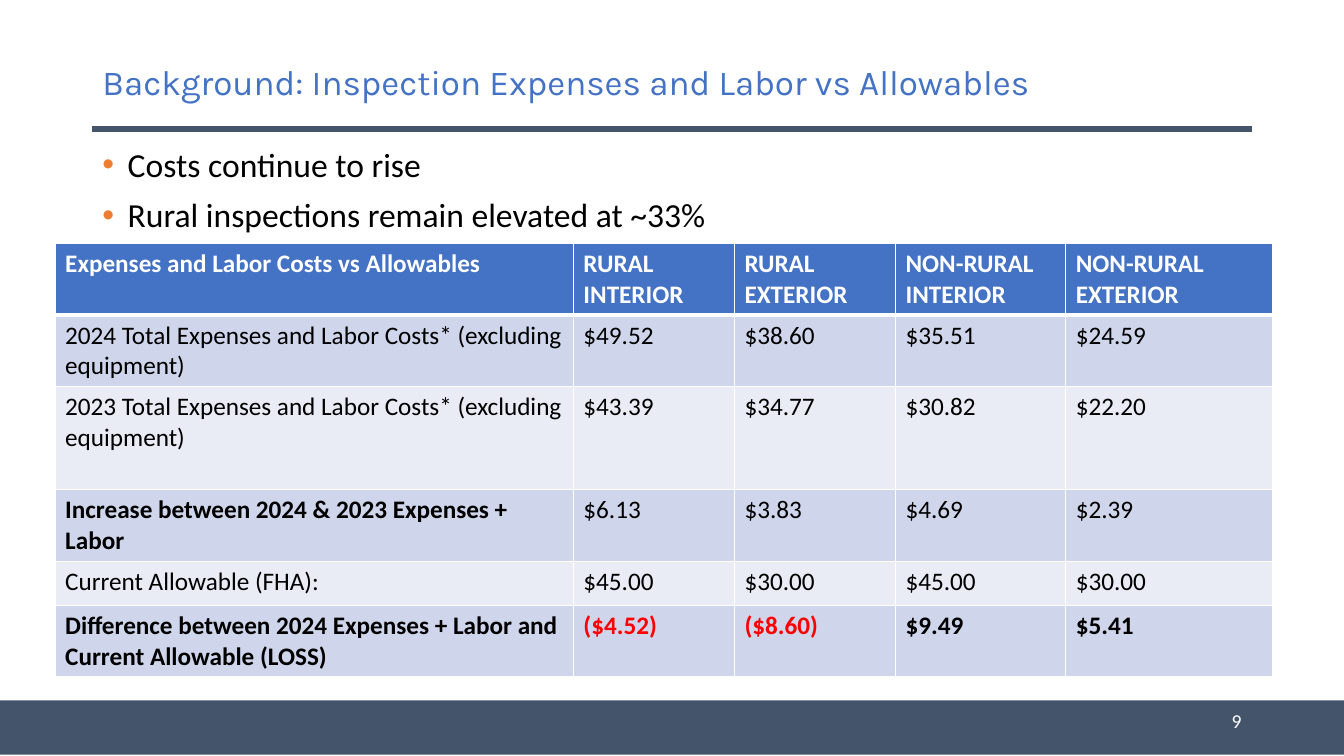
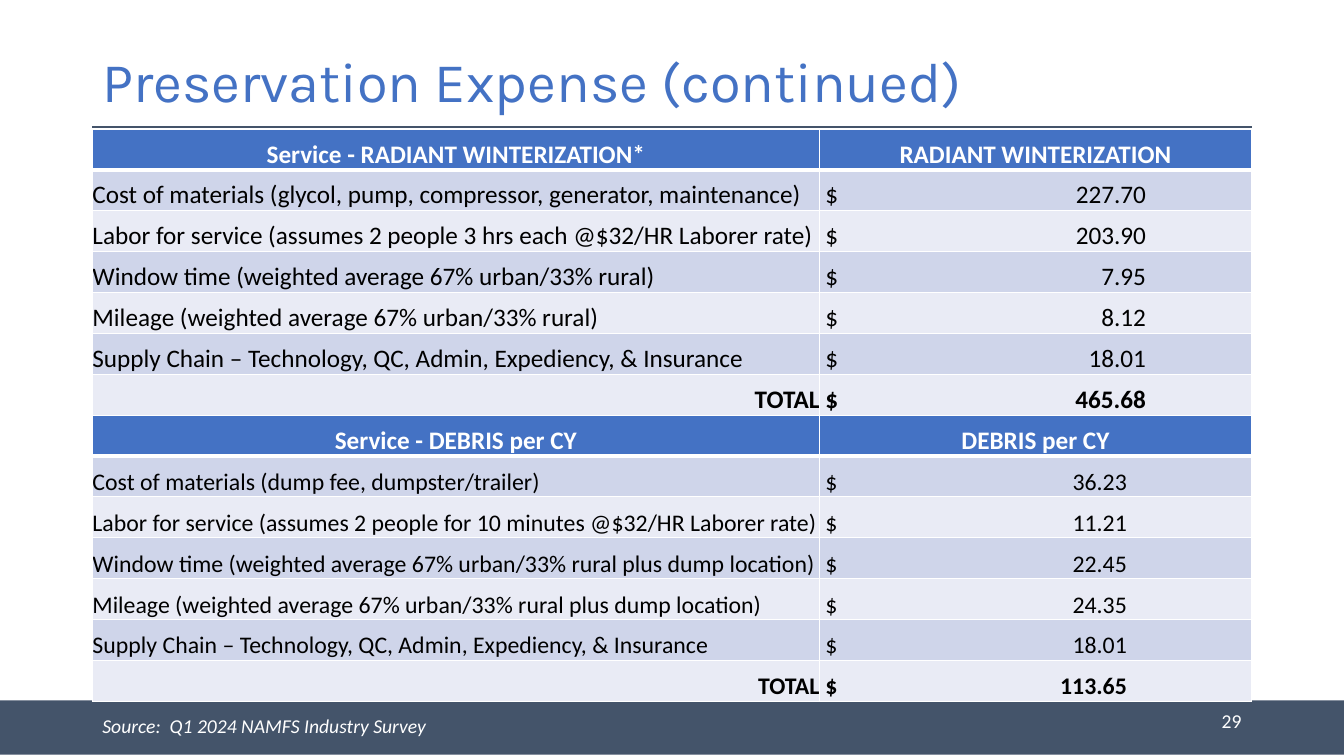
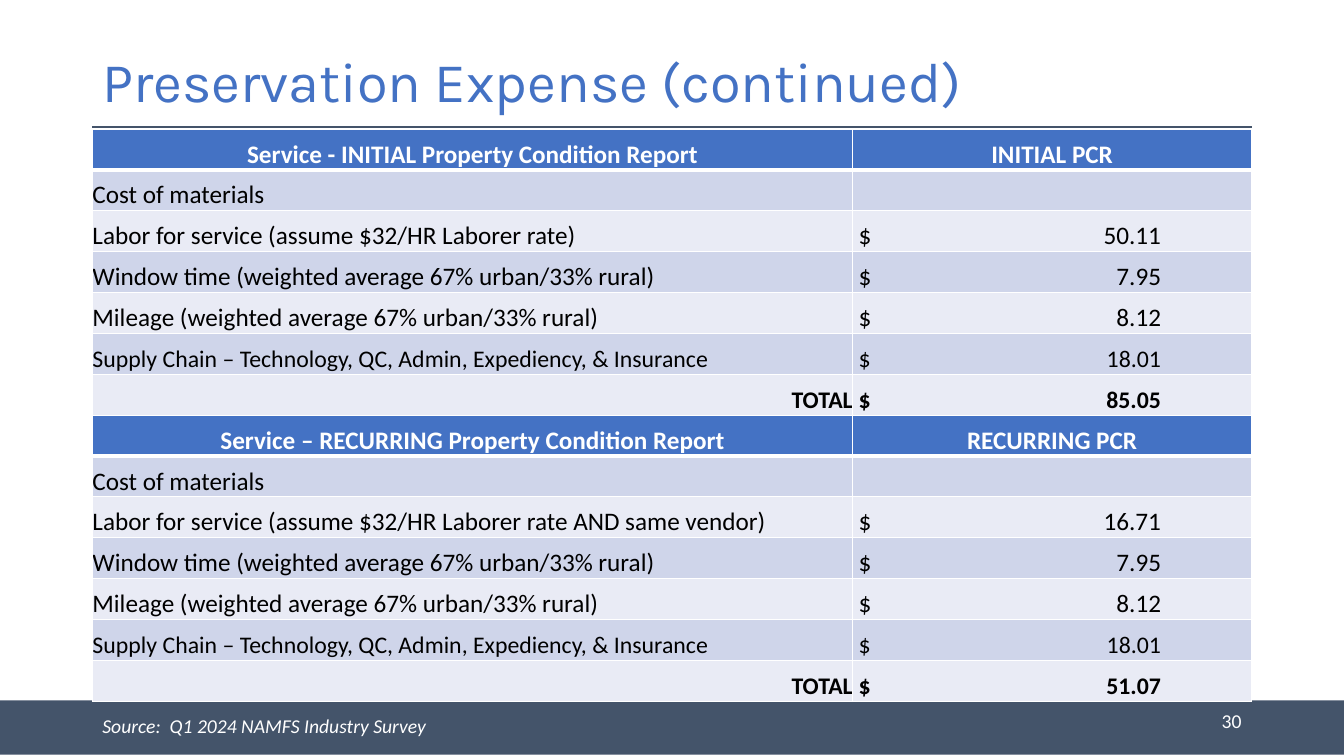
from lxml import etree
from pptx import Presentation
from pptx.dml.color import RGBColor
from pptx.enum.shapes import MSO_CONNECTOR, MSO_SHAPE
from pptx.enum.text import MSO_ANCHOR, PP_ALIGN
from pptx.oxml.ns import qn
from pptx.util import Cm, Pt

RECTANGLE = MSO_SHAPE.RECTANGLE
STRAIGHT = MSO_CONNECTOR.STRAIGHT
TOP, MIDDLE, BOTTOM = MSO_ANCHOR.TOP, MSO_ANCHOR.MIDDLE, MSO_ANCHOR.BOTTOM
LEFT, CENTER, RIGHT = PP_ALIGN.LEFT, PP_ALIGN.CENTER, PP_ALIGN.RIGHT

COLORS = {
    "slate": "44546A",
    "blue": "4472C4",
    "orange": "ED7D31",
    "band_dark": "CFD5EA",
    "band_light": "E9EBF5",
    "white": "FFFFFF",
    "black": "000000",
    "red": "FF0000",
}
TITLE_FONT, BODY_FONT = "Karla", "Calibri"
SLIDE_WIDTH, SLIDE_HEIGHT = 33.87, 19.05
MARGIN, CONTENT_WIDTH = 2.33, 29.21
RULE_TOP, FOOTER_TOP = 3.25, 17.65
EXPENSE_ROW_HEIGHT = 1.03
SUPPLY_CHAIN = "Supply Chain – Technology, QC, Admin, Expediency, & Insurance"
WINDOW_TIME = "Window time (weighted average 67% urban/33% rural)"
MILEAGE = "Mileage (weighted average 67% urban/33% rural)"

COST_WIDTHS = [13.06, 4.06, 4.06, 4.29, 5.21]
COST_HEIGHTS = [1.8, 1.8, 2.6, 1.8, 1.11, 1.8]
COST_ROWS = [
    ["Expenses and Labor Costs vs Allowables", "RURAL\nINTERIOR", "RURAL\nEXTERIOR",
     "NON-RURAL\nINTERIOR", "NON-RURAL\nEXTERIOR"],
    ["2024 Total Expenses and Labor Costs* (excluding equipment)",
     "$49.52", "$38.60", "$35.51", "$24.59"],
    ["2023 Total Expenses and Labor Costs* (excluding equipment)",
     "$43.39", "$34.77", "$30.82", "$22.20"],
    ["Increase between 2024 & 2023 Expenses + Labor",
     "$6.13", "$3.83", "$4.69", "$2.39"],
    ["Current Allowable (FHA):", "$45.00", "$30.00", "$45.00", "$30.00"],
    ["Difference between 2024 Expenses + Labor and Current Allowable (LOSS)",
     "($4.52)", "($8.60)", "$9.49", "$5.41"],
]
RADIANT_ROWS = [
    ("Service - RADIANT WINTERIZATION*", "RADIANT WINTERIZATION"),
    ("Cost of materials (glycol, pump, compressor, generator, maintenance)", "227.70"),
    ("Labor for service (assumes 2 people 3 hrs each @$32/HR Laborer rate)", "203.90"),
    (WINDOW_TIME, "7.95"),
    (MILEAGE, "8.12"),
    (SUPPLY_CHAIN, "18.01"),
    ("TOTAL", "465.68"),
]
DEBRIS_ROWS = [
    ("Service - DEBRIS per CY", "DEBRIS per CY"),
    ("Cost of materials (dump fee, dumpster/trailer)", "36.23"),
    ("Labor for service (assumes 2 people for 10 minutes @$32/HR Laborer rate)", "11.21"),
    ("Window time (weighted average 67% urban/33% rural plus dump location)", "22.45"),
    ("Mileage (weighted average 67% urban/33% rural plus dump location)", "24.35"),
    (SUPPLY_CHAIN, "18.01"),
    ("TOTAL", "113.65"),
]
INITIAL_ROWS = [
    ("Service - INITIAL Property Condition Report", "INITIAL PCR"),
    ("Cost of materials", ""),
    ("Labor for service (assume $32/HR Laborer rate)", "50.11"),
    (WINDOW_TIME, "7.95"),
    (MILEAGE, "8.12"),
    (SUPPLY_CHAIN, "18.01"),
    ("TOTAL", "85.05"),
]
RECURRING_ROWS = [
    ("Service – RECURRING Property Condition Report", "RECURRING PCR"),
    ("Cost of materials", ""),
    ("Labor for service (assume $32/HR Laborer rate AND same vendor)", "16.71"),
    (WINDOW_TIME, "7.95"),
    (MILEAGE, "8.12"),
    (SUPPLY_CHAIN, "18.01"),
    ("TOTAL", "51.07"),
]


def rgb(name):
    """Return the named colour."""
    return RGBColor.from_string(COLORS[name])


def write_text(text_frame, text, size, color, font=BODY_FONT, align=LEFT, bold=False, italic=False):
    """Fill a text frame and format all its runs."""
    text_frame.text = text
    for paragraph in text_frame.paragraphs:
        paragraph.alignment = align
        for run in paragraph.runs:
            run.font.name = font
            run.font.size = Pt(size)
            run.font.bold = bold
            run.font.italic = italic
            run.font.color.rgb = rgb(color)


def add_text(slide, box, text, size, color, anchor=TOP, **style):
    """Add a wrapping text box and return its text frame."""
    text_frame = slide.shapes.add_textbox(*map(Cm, box)).text_frame
    text_frame.word_wrap = True
    text_frame.vertical_anchor = anchor
    write_text(text_frame, text, size, color, **style)
    return text_frame


def add_frame(presentation, title, title_size, number):
    """Add a slide with its footer band, title rule, title and number."""
    slide = presentation.slides.add_slide(presentation.slide_layouts[6])
    band = slide.shapes.add_shape(RECTANGLE, 0, Cm(FOOTER_TOP), Cm(SLIDE_WIDTH), Cm(1.37))
    band.shadow.inherit = False
    band.fill.solid()
    band.fill.fore_color.rgb = rgb("slate")
    band.line.fill.background()
    rule = slide.shapes.add_connector(
        STRAIGHT, Cm(MARGIN), Cm(RULE_TOP), Cm(MARGIN + CONTENT_WIDTH), Cm(RULE_TOP))
    rule.line.color.rgb = rgb("slate")
    rule.line.width = Pt(4)
    etree.SubElement(rule._element.spPr, qn("a:effectLst"))
    heading = add_text(slide, (MARGIN, 1.01, CONTENT_WIDTH, 2.24), title, title_size, "blue",
                       MIDDLE, font=TITLE_FONT)
    heading.paragraphs[0].line_spacing = 0.9
    add_text(slide, (23.92, FOOTER_TOP, 7.62, 1.02), str(number), 14, "white", MIDDLE, align=RIGHT)
    return slide


def add_bullets(slide, box, items):
    """Add a bulleted list."""
    text_frame = add_text(slide, box, "\n".join(items), 24, "black")
    for index, paragraph in enumerate(text_frame.paragraphs):
        paragraph.line_spacing = 0.9
        paragraph.space_before = Pt(10 if index else 0)
        properties = paragraph._p.get_or_add_pPr()
        properties.set("marL", str(Cm(0.64)))
        properties.set("indent", str(Cm(-0.64)))
        bullet_color = etree.SubElement(properties, qn("a:buClr"))
        etree.SubElement(bullet_color, qn("a:srgbClr"), val=COLORS["orange"])
        etree.SubElement(properties, qn("a:buFont"), typeface="Arial")
        etree.SubElement(properties, qn("a:buChar"), char="•")


def set_borders(cell, row):
    """Draw white cell borders, thicker under the header row."""
    widths = {"lnL": 1, "lnR": 1, "lnT": 3 if row == 1 else 1, "lnB": 1 if row else 3}
    properties = cell._tc.get_or_add_tcPr()
    for side, width in widths.items():
        line = etree.SubElement(properties, qn("a:" + side), w=str(Pt(width)))
        fill = etree.SubElement(line, qn("a:solidFill"))
        etree.SubElement(fill, qn("a:srgbClr"), val=COLORS["white"])


def add_grid(slide, left, top, widths, heights):
    """Add an empty banded table with a blue header row."""
    box = map(Cm, (left, top, sum(widths), sum(heights)))
    table = slide.shapes.add_table(len(heights), len(widths), *box).table
    table.horz_banding = False
    table.first_row = False
    for column, width in zip(table.columns, widths):
        column.width = Cm(width)
    for index, (row, height) in enumerate(zip(table.rows, heights)):
        row.height = Cm(height)
        band = "band_dark" if index % 2 else "band_light"
        for cell in row.cells:
            set_borders(cell, index)
            cell.fill.solid()
            cell.fill.fore_color.rgb = rgb(band if index else "blue")
    return table


def add_cost_table(slide):
    """Add the comparison of costs with allowables."""
    table = add_grid(slide, 1.39, 6.14, COST_WIDTHS, COST_HEIGHTS)
    last = len(COST_ROWS) - 1
    for row, values in enumerate(COST_ROWS):
        for column, text in enumerate(values):
            color = "red" if text.startswith("(") else "black" if row else "white"
            bold = row in (0, last) or text.startswith("Increase")
            write_text(table.cell(row, column).text_frame, text, 18, color, bold=bold)


def add_right_tab(paragraph, position):
    """Give a paragraph a right-aligned tab stop."""
    tabs = etree.SubElement(paragraph._p.get_or_add_pPr(), qn("a:tabLst"))
    etree.SubElement(tabs, qn("a:tab"), pos=str(Cm(position)), algn="r")


def add_expense_table(slide, top, rows, label_width, tab, small_from):
    """Add a service table; rows from small_from on have smaller text."""
    widths = [label_width, CONTENT_WIDTH - label_width]
    table = add_grid(slide, MARGIN, top, widths, [EXPENSE_ROW_HEIGHT] * len(rows))
    for row, values in enumerate(rows):
        is_total = values[0] == "TOTAL"
        for column, text in enumerate(values):
            is_amount = row > 0 and column == 1 and text != ""
            cell = table.cell(row, column)
            cell.vertical_anchor = BOTTOM
            cell.margin_left = Cm(0.15 if is_amount else 0)
            cell.margin_right = cell.margin_bottom = 0
            cell.margin_top = Cm(0.02)
            align = CENTER if row == 0 else RIGHT if is_total and column == 0 else LEFT
            write_text(cell.text_frame, "$\t" + text if is_amount else text,
                       17 if row >= small_from else 18, "black" if row else "white",
                       align=align, bold=row == 0 or is_total)
            if is_amount:
                add_right_tab(cell.text_frame.paragraphs[0], tab)


def add_expense_slide(presentation, number, label_width, upper, lower):
    """Add a slide with two stacked service tables and a source line."""
    slide = add_frame(presentation, "Preservation Expense (continued)", 40, number)
    top = RULE_TOP
    for rows, tab, small_from in (upper, lower):
        add_expense_table(slide, top, rows, label_width, tab, small_from)
        top += EXPENSE_ROW_HEIGHT * len(rows)
    add_text(slide, (MARGIN, 17.86, 16.94, 0.86), "Source:  Q1 2024 NAMFS Industry Survey",
             14, "white", italic=True)


def main():
    """Build and save the presentation."""
    presentation = Presentation()
    presentation.slide_width = Cm(SLIDE_WIDTH)
    presentation.slide_height = Cm(SLIDE_HEIGHT)
    slide = add_frame(
        presentation, "Background: Inspection Expenses and Labor vs Allowables", 25, 9)
    add_bullets(slide, (MARGIN, 3.61, CONTENT_WIDTH, 2.5),
                ["Costs continue to rise", "Rural inspections remain elevated at ~33%"])
    add_cost_table(slide)
    add_expense_slide(presentation, 29, 18.32, (RADIANT_ROWS, 8.08, 7), (DEBRIS_ROWS, 7.6, 1))
    add_expense_slide(presentation, 30, 19.16, (INITIAL_ROWS, 7.62, 5), (RECURRING_ROWS, 7.62, 5))
    presentation.save("out.pptx")


if __name__ == "__main__":
    main()
